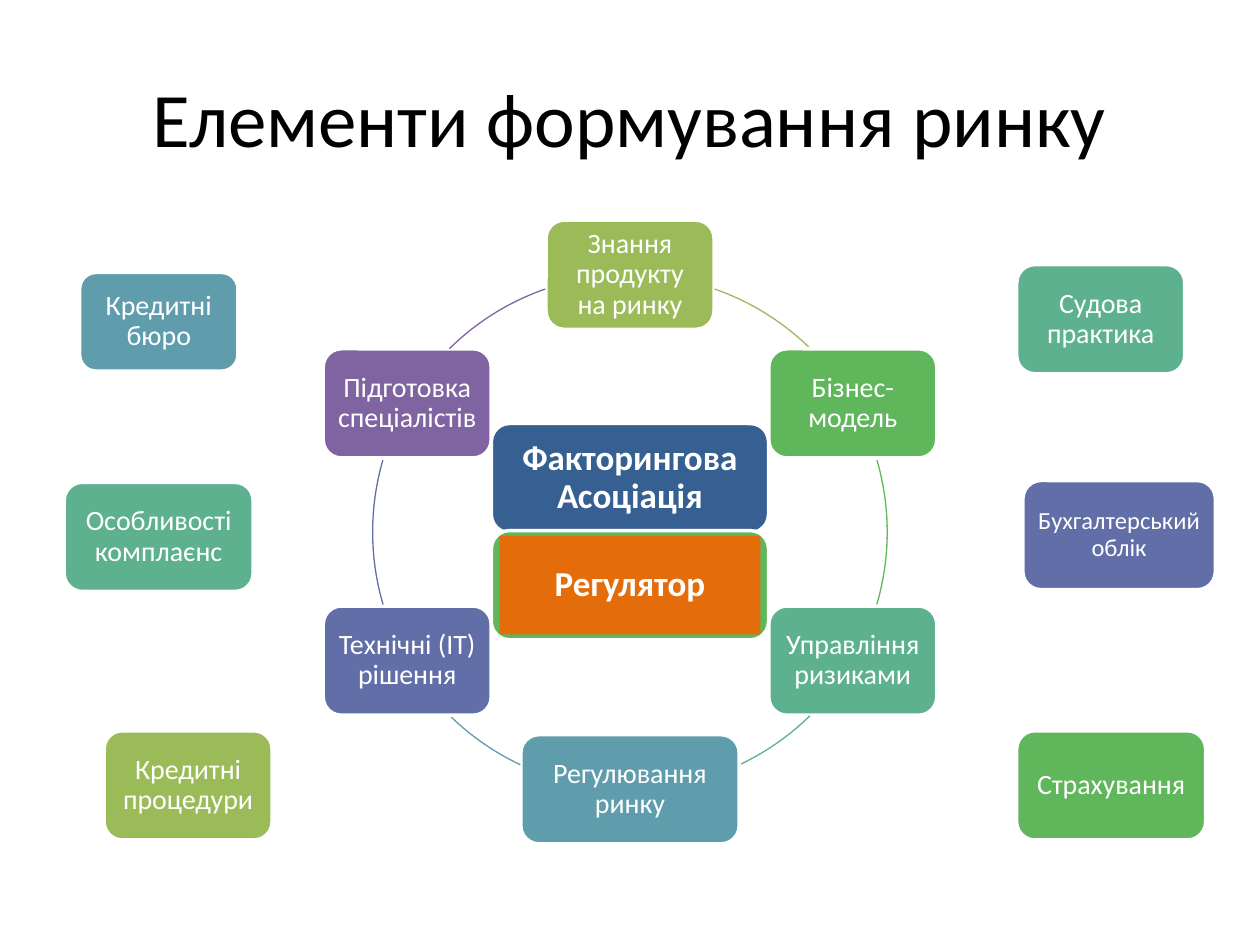
from dataclasses import dataclass
from math import cos, radians, sin

from pptx import Presentation
from pptx.dml.color import RGBColor
from pptx.enum import shapes, text
from pptx.util import Pt


@dataclass(frozen=True)
class Theme:
    font: str = "Calibri"
    title_size: float = 44
    core_size: float = 20
    label_size: float = 16
    small_size: float = 14
    black: str = "000000"
    white: str = "FFFFFF"
    lime: str = "9BBB59"
    green: str = "5FB65B"
    mint: str = "5DB18E"
    teal: str = "5F9DAC"
    indigo: str = "626EA7"
    purple: str = "8064A2"
    navy: str = "376092"
    orange: str = "E46C0A"


THEME = Theme()
CARD_W, CARD_H = 96, 62.4
SHAPE = shapes.MSO_SHAPE


def rgb(color):
    return RGBColor.from_string(color)


def write(frame, words, size, color, bold=False, spacing=0.9, margin=4.5):
    frame.word_wrap = True
    frame.vertical_anchor = text.MSO_ANCHOR.MIDDLE
    frame.margin_left = frame.margin_right = Pt(margin)
    frame.margin_top = frame.margin_bottom = Pt(margin)
    paragraph = frame.paragraphs[0]
    paragraph.text = words
    paragraph.alignment = text.PP_ALIGN.CENTER
    paragraph.line_spacing = spacing
    font = paragraph.font
    font.name, font.size, font.bold = THEME.font, Pt(size), bold
    font.color.rgb = rgb(color)


def add_block(slide, kind, box, fill):
    block = slide.shapes.add_shape(kind, *map(Pt, box))
    block.shadow.inherit = False
    block.fill.solid()
    block.fill.fore_color.rgb = rgb(fill)
    block.line.fill.background()
    return block


def add_card(slide, box, fill, words="", size=THEME.label_size, bold=False):
    card = add_block(slide, SHAPE.ROUNDED_RECTANGLE, box, fill)
    card.line.color.rgb = rgb(THEME.white)
    card.line.width = Pt(2)
    if words:
        write(card.text_frame, words, size, THEME.white, bold)


def add_title(slide, box):
    title = slide.shapes.add_textbox(*map(Pt, box))
    write(title.text_frame, "Елементи формування ринку", THEME.title_size,
          THEME.black, spacing=1)


def add_arc(slide, box, color, start, end):
    """Clockwise arc; angles run from 0° to 360°, starting at the right."""
    arc = slide.shapes.add_shape(SHAPE.ARC, *map(Pt, box))
    arc.shadow.inherit = False
    arc.fill.background()
    arc.line.color.rgb = rgb(color)
    arc.line.width = Pt(0.75)
    # Angles count 60000 to the degree, adjustments 100000 to the unit
    arc.adjustments[0] = start * 0.6
    arc.adjustments[1] = end * 0.6


def add_ring(slide, box):
    """Six cards, 60° apart, each joined by an arc to the next one."""
    left, top, width, _ = box
    radius = width / 2
    # label, colour, card width, start and end of the arc in degrees
    cards = [
        ("Знання продукту на ринку", THEME.lime, CARD_W, 289.2, 314.6),
        ("Бізнес-модель", THEME.green, CARD_W, 343.8, 16.4),
        ("Управління\vризиками", THEME.mint, CARD_W, 45.6, 64.8),
        ("Регулювання ринку", THEME.teal, 124.8, 115.2, 134.4),
        ("Технічні (IT) рішення", THEME.indigo, CARD_W, 163.6, 196.2),
        ("Підготовка спеціалістів", THEME.purple, CARD_W, 225.4, 250.8),
    ]
    for step, (words, color, card_w, start, end) in enumerate(cards):
        angle = radians(60 * step - 90)
        x = left + radius + radius * cos(angle) - card_w / 2
        y = top + radius + radius * sin(angle) - CARD_H / 2
        add_card(slide, (x, y, card_w, CARD_H), color, words)
        add_arc(slide, box, color, start, end)


def add_surroundings(slide, box):
    """Outer cards, placed from the corner of the box."""
    left, top, _, _ = box
    cards = [
        ("Страхування", THEME.green, 544.5, 266.4, 108, CARD_H, THEME.label_size),
        ("Бухгалтерський облік", THEME.indigo, 548, 123.4, 110, CARD_H,
         THEME.small_size),
        ("Особливості комплаєнс", THEME.mint, 0.2, 124.4, 108, CARD_H,
         THEME.label_size),
        ("Кредитні процедури", THEME.lime, 23, 266.4, CARD_W, CARD_H,
         THEME.label_size),
        ("Кредитні бюро", THEME.teal, 9, 4.5, 90.5, 56.4, THEME.label_size),
        ("Судова практика", THEME.mint, 544.5, 0, CARD_W, CARD_H,
         THEME.label_size),
    ]
    for words, color, x, y, width, height, size in cards:
        add_card(slide, (left + x, top + y, width, height), color, words, size)


def add_core(slide, box):
    """Association above the regulator, in the middle of the ring."""
    left, top, width, height = box
    add_card(slide, (left, top, width, CARD_H), THEME.navy,
             "Факторингова Асоціація", THEME.core_size, True)
    lower = top + height - CARD_H
    add_card(slide, (left, lower, width, CARD_H), THEME.green)
    panel = add_block(slide, SHAPE.RECTANGLE,
                      (left + 4.7, lower + 3, width - 9.4, CARD_H - 6),
                      THEME.orange)
    write(panel.text_frame, "Регулятор", THEME.core_size, THEME.white, True)


def main():
    deck = Presentation()
    deck.slide_width, deck.slide_height = Pt(720), Pt(540)
    slide = deck.slides.add_slide(deck.slide_layouts[6])
    add_title(slide, (36, 21.6, 648, 90))
    add_ring(slide, (213, 157, 294, 294))
    add_surroundings(slide, (36.5, 151.2, 658, 328.8))
    add_core(slide, (280.8, 242, 158.4, 123.6))
    deck.save("out.pptx")


if __name__ == "__main__":
    main()
